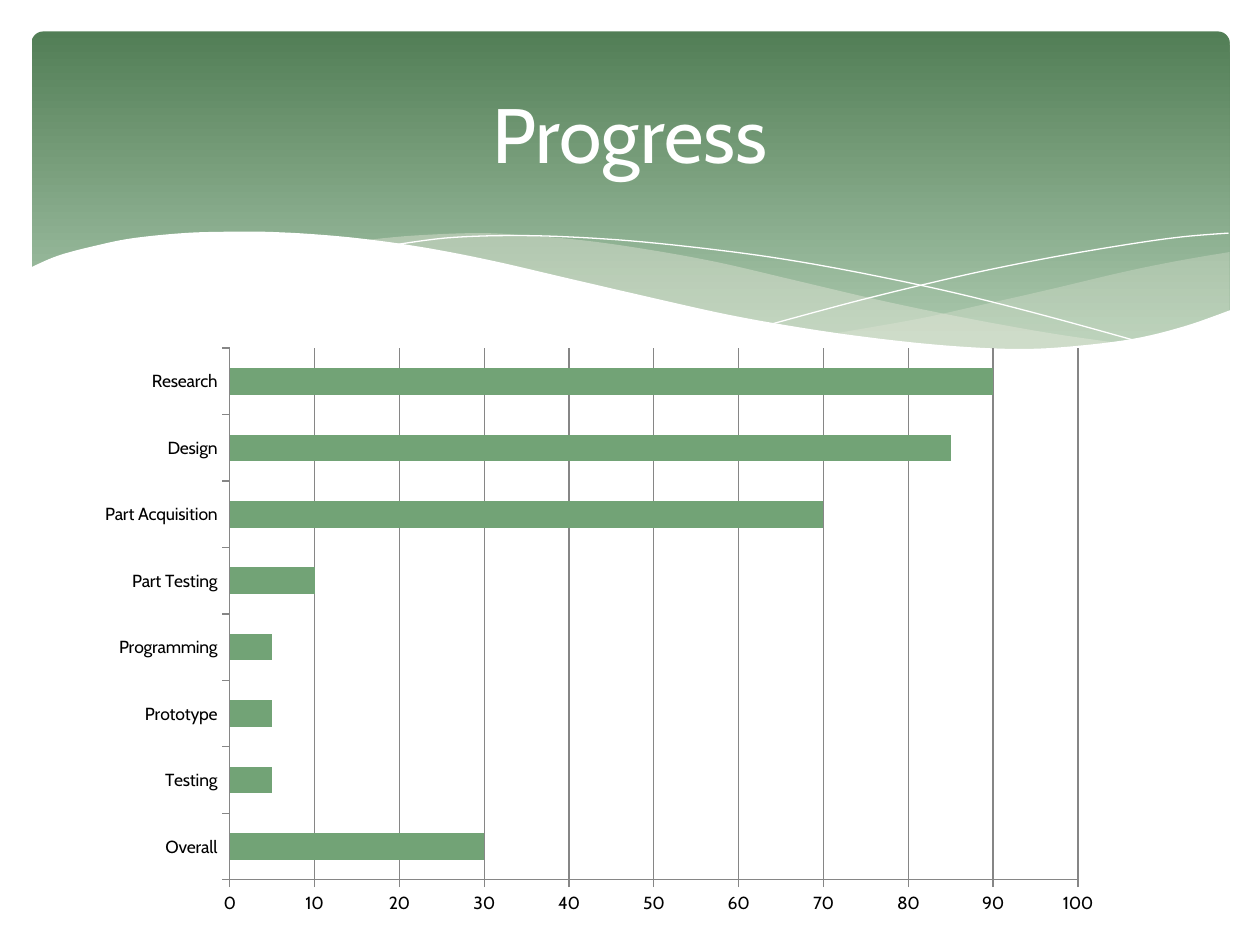
from lxml.etree import SubElement
from pptx import Presentation
from pptx.chart.data import CategoryChartData as Data
from pptx.dml.color import RGBColor as RGB
from pptx.enum.chart import XL_CHART_TYPE as Kind, XL_TICK_MARK as Tick
from pptx.enum.shapes import MSO_SHAPE as Shape
from pptx.enum.text import MSO_ANCHOR as Anchor, PP_ALIGN as Align
from pptx.oxml.ns import qn
from pptx.util import Inches, Pt

WHITE = RGB(0xFF, 0xFF, 0xFF)
BLACK = RGB(0, 0, 0)
DARK = RGB(0x52, 0x7E, 0x56)
LIGHT = RGB(0xAA, 0xC8, 0xAD)
CREAM = RGB(0xEA, 0xEB, 0xDE)
GREEN = RGB(0x72, 0xA3, 0x76)
GRAY = RGB(0x86, 0x86, 0x86)
FONT = "Cabin"


def curve(knots, steps=6):
    ends = [knots[0], *knots, knots[-1]]
    points = [knots[0]]
    for a, b, c, d in zip(ends, ends[1:], ends[2:], ends[3:]):
        for step in range(1, steps + 1):
            t = step / steps
            points.append(tuple(
                (2 * q + (r - p) * t + (2 * p - 5 * q + 4 * r - s) * t**2
                 + (3 * q - p - 3 * r + s) * t**3) / 2
                for p, q, r, s in zip(a, b, c, d)))
    return points


def draw(points, color=None, alpha=100):
    spots = [(Inches(x), Inches(y)) for x, y in points]
    pen = slide.shapes.build_freeform(*spots[0])
    pen.add_line_segments(spots[1:], close=color is not None)
    shape = pen.convert_to_shape()
    shape.shadow.inherit = False
    if color is None:
        shape.fill.background()
        shape.line.color.rgb = WHITE
        shape.line.width = Pt(0)
        return
    shape.line.fill.background()
    shape.fill.solid()
    shape.fill.fore_color.rgb = color
    if alpha < 100:
        tint = shape.element.spPr.find(qn("a:solidFill"))[0]
        SubElement(tint, qn("a:alpha")).set("val", str(alpha * 1000))


deck = Presentation()
deck.slide_width, deck.slide_height = Inches(10), Inches(7.5)
slide = deck.slides.add_slide(deck.slide_layouts[5])

band = slide.shapes.add_shape(
    Shape.ROUNDED_RECTANGLE, Inches(0.25), Inches(0.25), Inches(9.51), Inches(2.7))
band.adjustments[0] = 0.034
band.shadow.inherit = False
band.line.fill.background()
band.fill.gradient()
band.fill.gradient_angle = 270
for stop, color, place in zip(band.fill.gradient_stops, (DARK, LIGHT), (0, 0.9)):
    stop.color.rgb = color
    stop.position = place

right = curve([(9.76, 2), (9.35, 2.07), (8.91, 2.16), (8.32, 2.3), (7.79, 2.42),
               (7.29, 2.53), (6.61, 2.65)])
right += curve([(6.61, 2.65), (7.05, 2.71), (7.57, 2.76), (8.03, 2.78), (8.54, 2.76),
                (8.97, 2.7), (9.35, 2.62), (9.76, 2.47)])
draw(right, CREAM, 29)

left = curve([(8.93, 2.73), (8.37, 2.65), (7.75, 2.54), (7.06, 2.4), (6.29, 2.22),
              (5.69, 2.08), (5.14, 1.98), (4.65, 1.91), (4.2, 1.87), (3.8, 1.85),
              (3.28, 1.87), (2.86, 1.91)])
left += curve([(2.86, 1.91), (3.42, 1.99), (4.04, 2.11), (4.91, 2.32), (5.66, 2.48),
               (6.34, 2.61), (6.95, 2.7), (7.48, 2.76), (7.96, 2.78), (8.48, 2.77),
               (8.93, 2.73)])
draw(left, CREAM, 40)

draw(curve([(3.09, 1.95), (3.53, 1.89), (4.01, 1.87), (4.5, 1.88), (5.1, 1.92),
            (5.82, 2), (6.36, 2.08), (6.95, 2.19), (7.6, 2.33), (8.31, 2.51),
            (9.07, 2.72)]))
draw(curve([(6.13, 2.57), (6.72, 2.41), (7.2, 2.29), (7.76, 2.16), (8.36, 2.04),
            (8.95, 1.94), (9.38, 1.88), (9.75, 1.85)]))

wave = curve([(9.77, 2.46), (9.4, 2.59), (8.99, 2.69), (8.5, 2.75), (8.09, 2.77),
              (7.61, 2.75), (7.08, 2.7), (6.48, 2.62), (5.79, 2.5), (5.03, 2.33),
              (4.47, 2.2), (3.91, 2.07), (3.4, 1.97), (2.92, 1.9), (2.5, 1.86),
              (2.11, 1.84), (1.77, 1.84), (1.46, 1.85), (1.06, 1.89), (0.76, 1.95),
              (0.46, 2.03), (0.23, 2.13)])
draw(wave + [(0.23, 3.29), (9.77, 3.29)], WHITE)

title = slide.shapes.title
slide.shapes.element.append(title.element)
title.left, title.top = Inches(0.5), Inches(0.37)
title.width, title.height = Inches(9), Inches(1.37)
title.text = "Progress"
title.text_frame.vertical_anchor = Anchor.MIDDLE
para = title.text_frame.paragraphs[0]
para.alignment = Align.CENTER
para.font.name = FONT
para.font.size = Pt(44)
para.font.color.rgb = WHITE

data = Data()
data.categories = ["Overall", "Testing", "Prototype", "Programming", "Part Testing",
                   "Part Acquisition", "Design", "Research"]
data.add_series("Series 1", [30, 5, 5, 5, 10, 70, 85, 90])
chart = slide.shapes.add_chart(
    Kind.BAR_CLUSTERED, Inches(0.67), Inches(2.67), Inches(8.17), Inches(4.67), data).chart
chart.has_legend = False
chart.has_title = False
chart.font.name = FONT
chart.font.size = Pt(10)
chart.font.color.rgb = BLACK

plot = chart.plots[0]
plot.gap_width = 150
plot.vary_by_categories = False
bars = plot.series[0].format.fill
bars.solid()
bars.fore_color.rgb = GREEN

scale = chart.value_axis
scale.minimum_scale, scale.maximum_scale, scale.major_unit = 0, 100, 10
scale.has_major_gridlines = True
scale.major_gridlines.format.line.color.rgb = GRAY
for axis in (scale, chart.category_axis):
    axis.major_tick_mark = Tick.OUTSIDE
    axis.minor_tick_mark = Tick.NONE
    axis.format.line.color.rgb = GRAY

deck.save("out.pptx")
